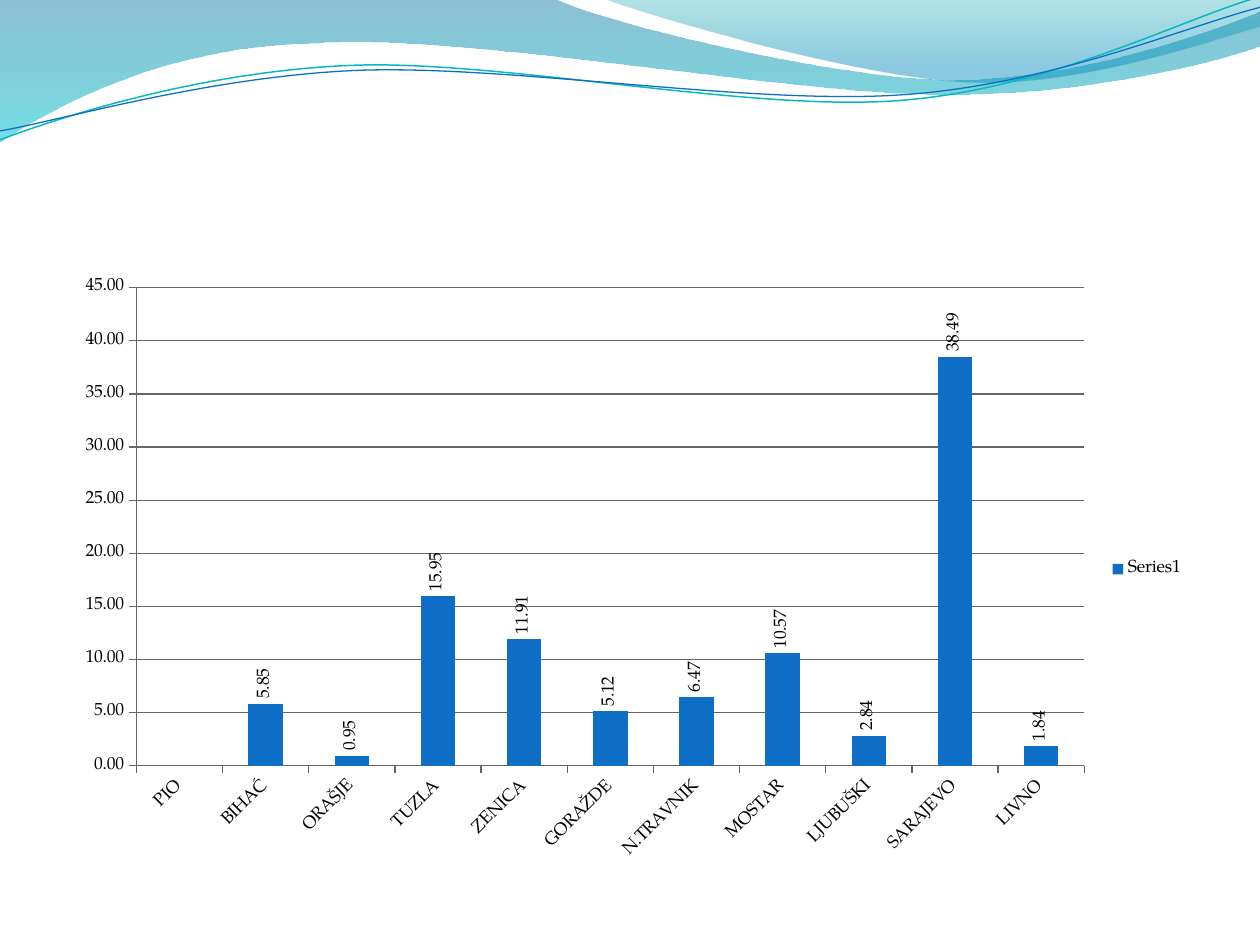
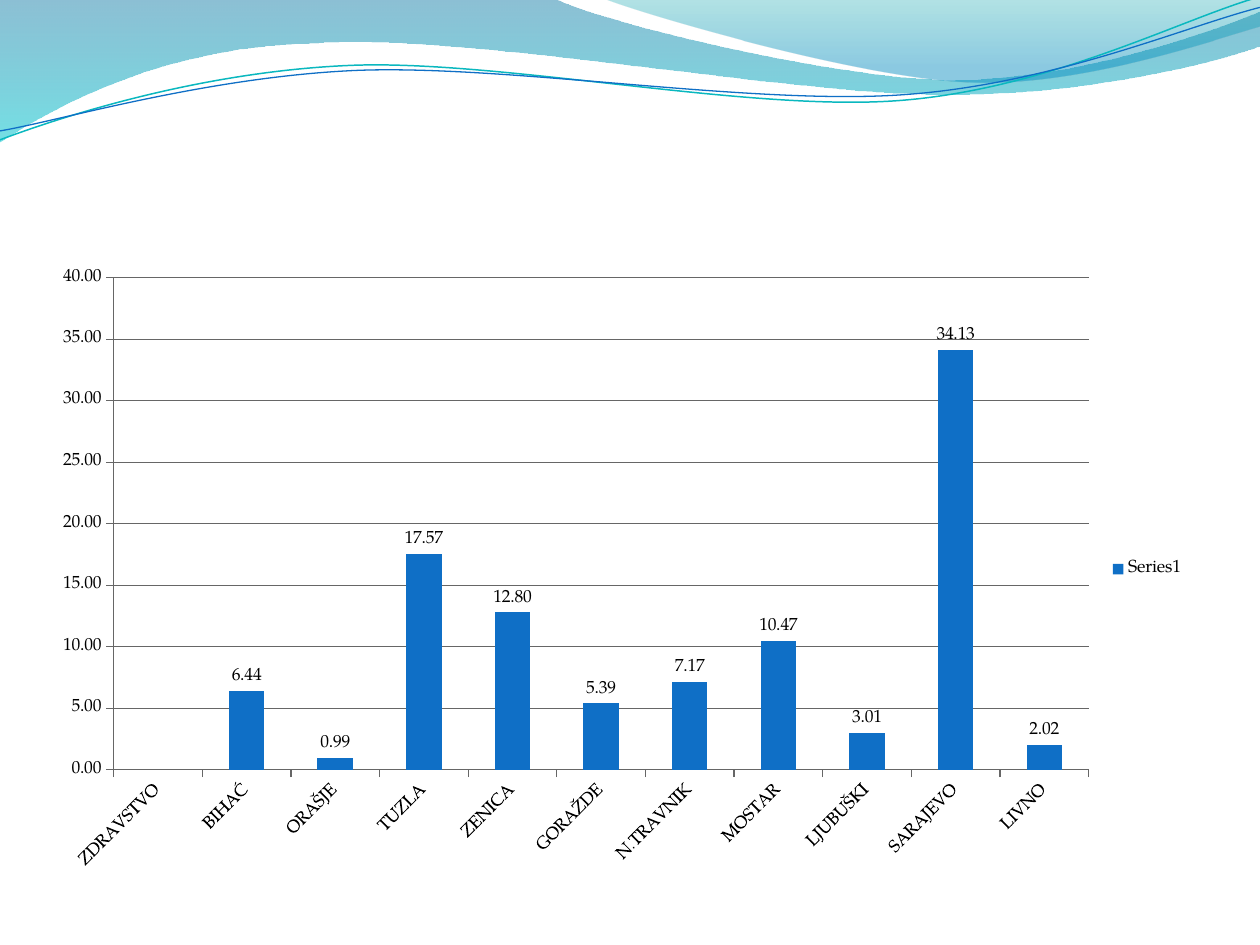
from pptx import Presentation
from pptx.chart.data import CategoryChartData
from pptx.dml.color import RGBColor
from pptx.enum.chart import XL_CHART_TYPE as ChartType
from pptx.enum.chart import XL_LABEL_POSITION as LabelPosition
from pptx.enum.chart import XL_LEGEND_POSITION as LegendPosition
from pptx.enum.chart import XL_TICK_MARK as TickMark
from pptx.oxml import parse_xml
from pptx.oxml.ns import nsdecls, qn
from pptx.util import Cm, Pt

# Shared style
FONT = "TeX Gyre Pagella"
TEXT, GRID, BLUE, TEAL = "000000", "666666", "0F6FC6", "0AB8BF"
NUMBER_FORMAT = "#,##0.00"
CHART_WIDTH, CHART_HEIGHT = Cm(22.86), Cm(12.19)

# Wave outlines in cm: a pair is a straight step, a triple of pairs is a curve
BACK_BAND = [
    (0, 0), (11.18, -0.03),
    ((12.09, 0.43), (16.87, 1.6), (19.25, 1.6)),
    ((21.67, 1.6), (24.33, 0.66), (25.4, 0.23)),
    (25.43, 0.91),
    ((24.97, 1.12), (22.1, 1.93), (18.95, 1.9)),
    ((15.8, 1.9), (9.7, 0.71), (6.53, 0.86)),
    ((3.28, 0.91), (1.17, 2.11), (-0.03, 2.87)),
]
FRONT_BAND = [
    (12.17, -0.03),
    ((12.93, 0.28), (17.32, 1.57), (19.53, 1.65)),
    ((21.74, 1.75), (24.41, 0.81), (25.4, 0.53)),
    (25.4, 0),
]
TEAL_WAVE = [
    (0, 2.82),
    ((1.22, 2.36), (4.01, 1.45), (7.04, 1.32)),
    ((10.03, 1.19), (15.06, 2.26), (18.11, 2.03)),
    ((21.16, 1.8), (23.83, 0.38), (25.35, -0.05)),
]
BLUE_WAVE = [
    (0, 2.64),
    ((1.19, 2.44), (4.17, 1.55), (7.19, 1.42)),
    ((10.24, 1.3), (15.16, 2.13), (18.21, 1.91)),
    ((21.23, 1.7), (23.9, 0.53), (25.4, 0.15)),
]

# Chart content
CITIES = ["BIHAĆ", "ORAŠJE", "TUZLA", "ZENICA", "GORAŽDE", "N.TRAVNIK",
          "MOSTAR", "LJUBUŠKI", "SARAJEVO", "LIVNO"]
PENSION = [5.85, 0.95, 15.95, 11.91, 5.12, 6.47, 10.57, 2.84, 38.49, 1.84]
HEALTH = [6.44, 0.99, 17.57, 12.8, 5.39, 7.17, 10.47, 3.01, 34.13, 2.02]


def color(hex_code):
    return RGBColor.from_string(hex_code)


def add_outline(slide, outline, close):
    """Build straight steps between the end points, then bend the curved ones."""
    ends = [step if len(step) == 2 else step[-1] for step in outline]
    corners = [(Cm(x), Cm(y)) for x, y in ends]
    builder = slide.shapes.build_freeform(*corners[0])
    builder.add_line_segments(corners[1:], close=close)
    shape = builder.convert_to_shape()
    shape.shadow.inherit = False
    straight_steps = list(shape._element.iter(qn("a:lnTo")))
    for step, straight in zip(outline[1:], straight_steps):
        if len(step) == 3:
            points = "".join(f'<a:pt x="{Cm(x) - shape.left}" y="{Cm(y) - shape.top}"/>'
                             for x, y in step)
            curve = parse_xml(f'<a:cubicBezTo {nsdecls("a")}>{points}</a:cubicBezTo>')
            straight.getparent().replace(straight, curve)
    return shape


def add_band(slide, outline, stops):
    """Add a filled wave; each stop is position %, colour, opacity %."""
    band = add_outline(slide, outline, close=True)
    band.line.fill.background()
    band.fill.gradient()
    band.fill.gradient_angle = 270  # counter-clockwise, so top to bottom
    stop_list = band._element.spPr.find(qn("a:gradFill")).find(qn("a:gsLst"))
    for old_stop in list(stop_list):
        stop_list.remove(old_stop)
    for position, hex_code, opacity in stops:
        stop_list.append(parse_xml(
            f'<a:gs {nsdecls("a")} pos="{position * 1000}"><a:srgbClr val="{hex_code}">'
            f'<a:alpha val="{opacity * 1000}"/></a:srgbClr></a:gs>'))


def add_wave_line(slide, outline, hex_code, width):
    wave = add_outline(slide, outline, close=False)
    wave.fill.background()
    wave.line.color.rgb = color(hex_code)
    wave.line.width = Pt(width)


def add_header_waves(slide):
    add_band(slide, BACK_BAND, [(0, "0074A1", 45), (100, "00C6CF", 55)])
    add_band(slide, FRONT_BAND, [(0, "00A1A9", 30), (80, "008BBF", 45)])
    add_wave_line(slide, TEAL_WAVE, TEAL, 0.85)
    add_wave_line(slide, BLUE_WAVE, BLUE, 0.75)


def style_font(font):
    font.name = FONT
    font.size = Pt(10)
    font.color.rgb = color(TEXT)


def rotate_text(element, degrees):
    element.find(qn("c:txPr")).find(qn("a:bodyPr")).set("rot", str(degrees * 60000))


def place_plot(chart, left, top, width, height):
    """Fix the inner plot area, given in cm from the chart's corner."""
    area = chart._chartSpace.chart.plotArea
    for old_layout in area.findall(qn("c:layout")):
        area.remove(old_layout)
    fractions = {"x": Cm(left) / CHART_WIDTH, "y": Cm(top) / CHART_HEIGHT,
                 "w": Cm(width) / CHART_WIDTH, "h": Cm(height) / CHART_HEIGHT}
    sizes = "".join(f'<c:{tag} val="{value:.5f}"/>' for tag, value in fractions.items())
    area.insert(0, parse_xml(
        f'<c:layout {nsdecls("c")}><c:manualLayout><c:layoutTarget val="inner"/>'
        f'<c:xMode val="edge"/><c:yMode val="edge"/>{sizes}</c:manualLayout></c:layout>'))


def style_axes(chart, top_value):
    categories, values = chart.category_axis, chart.value_axis
    for axis in (categories, values):
        axis.major_tick_mark = TickMark.OUTSIDE
        axis.minor_tick_mark = TickMark.NONE
        style_font(axis.tick_labels.font)
    rotate_text(categories._element, -45)
    values.minimum_scale, values.maximum_scale = 0, top_value
    values.major_unit = 5
    values.has_major_gridlines = True
    values.tick_labels.number_format = NUMBER_FORMAT
    values.tick_labels.number_format_is_linked = False
    for line in (categories.format.line, values.format.line,
                 values.major_gridlines.format.line):
        line.color.rgb = color(GRID)
        line.width = Pt(0.75)


def add_city_chart(slide, heading, shares, top_value, plot_area, label_angle):
    data = CategoryChartData(number_format=NUMBER_FORMAT)
    data.categories = [heading, *CITIES]
    data.add_series("Series1", [None, *shares])
    chart = slide.shapes.add_chart(ChartType.COLUMN_CLUSTERED, Cm(1.27), Cm(5.38),
                                   CHART_WIDTH, CHART_HEIGHT, data).chart
    chart.has_title = False
    style_font(chart.font)
    place_plot(chart, *plot_area)
    style_axes(chart, top_value)

    # Columns and their values
    columns = chart.plots[0]
    columns.gap_width = 150
    columns.vary_by_categories = False
    fill = columns.series[0].format.fill
    fill.solid()
    fill.fore_color.rgb = color(BLUE)
    columns.has_data_labels = True
    labels = columns.data_labels
    labels.show_value = True
    labels.position = LabelPosition.OUTSIDE_END
    labels.number_format = NUMBER_FORMAT
    labels.number_format_is_linked = False
    style_font(labels.font)
    rotate_text(labels._element, label_angle)

    # Legend
    chart.has_legend = True
    chart.legend.position = LegendPosition.RIGHT
    chart.legend.include_in_layout = False
    style_font(chart.legend.font)


def main():
    deck = Presentation()
    deck.slide_width, deck.slide_height = Cm(25.4), Cm(19.05)
    blank = deck.slide_layouts[6]
    city_charts = [
        ("PIO", PENSION, 45, (1.48, 0.42, 19.11, 9.64), -90),
        ("ZDRAVSTVO", HEALTH, 40, (0.94, 0.22, 19.73, 9.92), 0),
    ]
    for city_chart in city_charts:
        slide = deck.slides.add_slide(blank)
        add_header_waves(slide)
        add_city_chart(slide, *city_chart)
    deck.save("out.pptx")


if __name__ == "__main__":
    main()
